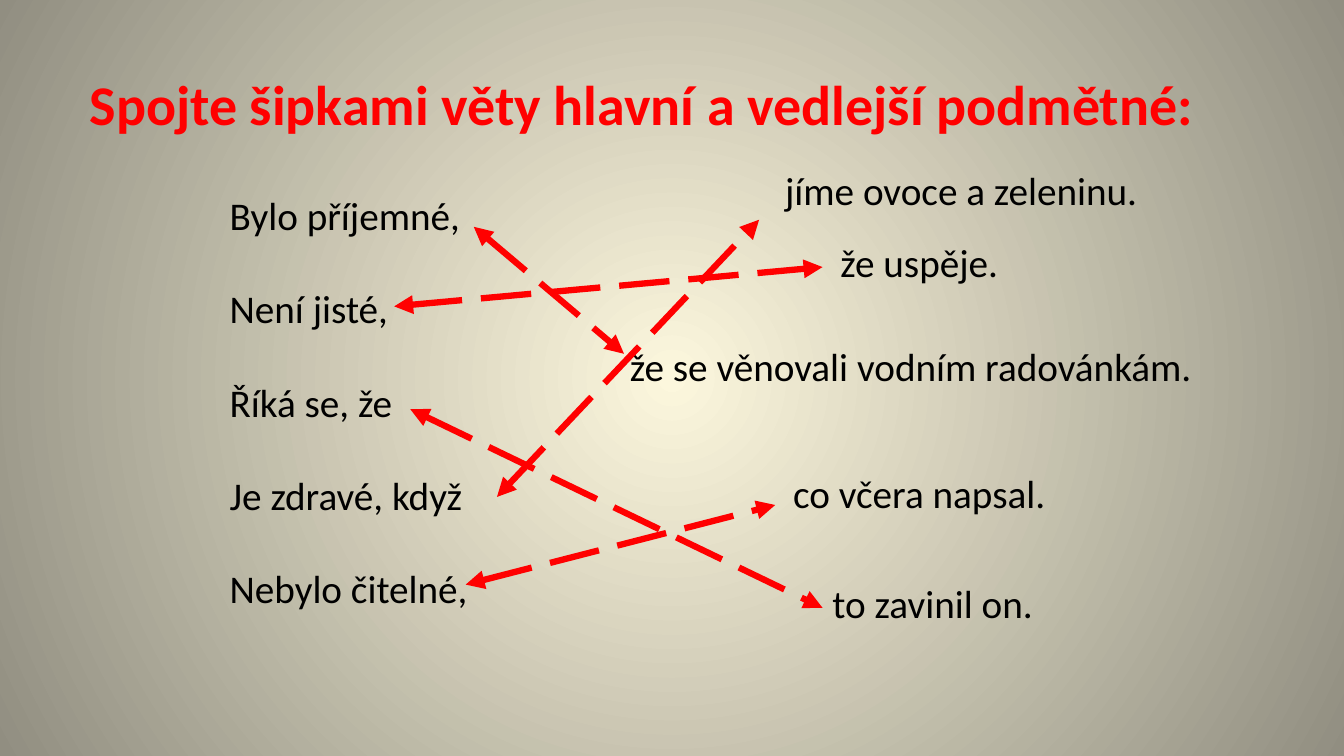
import pptx
import pptx.dml.color
import pptx.enum.dml
import pptx.enum.shapes
import pptx.enum.text
import pptx.oxml.ns
import pptx.util
from lxml import etree

RED = pptx.dml.color.RGBColor(0xFF, 0x00, 0x00)
BLACK = pptx.dml.color.RGBColor(0x00, 0x00, 0x00)
CREAM = pptx.dml.color.RGBColor(0xFC, 0xF7, 0xDD)
OLIVE_GREY = pptx.dml.color.RGBColor(0x91, 0x8E, 0x81)

SLIDE_WIDTH = pptx.util.Inches(13.33)
SLIDE_HEIGHT = pptx.util.Inches(7.5)
FONT = "Calibri"
CLAUSE_HEIGHT = 6.27

TITLE = "Spojte šipkami věty hlavní a vedlejší podmětné:"
MAIN_CLAUSES = [
    "Bylo příjemné,",
    "Není jisté,",
    "Říká se, že",
    "Je zdravé, když",
    "Nebylo čitelné,",
]
SUBJECT_CLAUSES = [
    ("že uspěje.", 61.8, 31.07, 18.6),
    ("jíme ovoce a zeleninu.", 57.68, 21.6, 32.18),
    ("co včera napsal.", 58.28, 61.6, 26.55),
    ("že se věnovali vodním radovánkám.", 46.13, 44.8, 45.15),
    ("to zavinil on.", 61.2, 76.27, 18.6),
]
ARROWS = [
    ((35.25, 30), (46.43, 46.8)),
    ((30.53, 54.13), (61.2, 80.4)),
    ((29.33, 40.53), (61.2, 35.33)),
    ((34.65, 77.33), (57.68, 66.8)),
    ((36.98, 65.73), (56.48, 29.07)),
]


def across(percent):
    return round(SLIDE_WIDTH * percent / 100)


def down(percent):
    return round(SLIDE_HEIGHT * percent / 100)


def add_child(parent, tag, **attributes):
    return etree.SubElement(parent, pptx.oxml.ns.qn(tag), attributes)


def paint_background(page):
    fill = page.background.fill
    fill.gradient()
    for stop, position, color in zip(fill.gradient_stops, (0, 1), (CREAM, OLIVE_GREY)):
        stop.position = position
        stop.color.rgb = color
    gradient = page.background._cSld.find(".//" + pptx.oxml.ns.qn("a:gradFill"))
    linear = gradient.find(pptx.oxml.ns.qn("a:lin"))
    circle = etree.Element(pptx.oxml.ns.qn("a:path"), {"path": "circle"})
    add_child(circle, "a:fillToRect", l="50000", t="50000", r="50000", b="50000")
    gradient.replace(linear, circle)


def add_text(page, lines, left, top, width, height, size=28, color=BLACK,
             bold=False, anchor=pptx.enum.text.MSO_ANCHOR.MIDDLE,
             inset=0.8, gap=0):
    box = page.shapes.add_textbox(across(left), down(top), across(width), down(height))
    frame = box.text_frame
    frame.word_wrap = True
    frame.vertical_anchor = anchor
    frame.margin_top = down(inset)
    frame.margin_right = frame.margin_bottom = 0
    for index, line in enumerate(lines):
        para = frame.add_paragraph() if index else frame.paragraphs[0]
        if index:
            para.space_before = pptx.util.Pt(gap)
        span = para.add_run()
        span.text = line
        span.font.name = FONT
        span.font.size = pptx.util.Pt(size)
        span.font.bold = bold
        span.font.color.rgb = color


def add_arrow(page, start, end):
    arrow = page.shapes.add_connector(
        pptx.enum.shapes.MSO_CONNECTOR.STRAIGHT,
        across(start[0]), down(start[1]), across(end[0]), down(end[1]))
    arrow.line.color.rgb = RED
    arrow.line.width = pptx.util.Pt(4.5)
    arrow.line.dash_style = pptx.enum.dml.MSO_LINE.LONG_DASH
    properties = arrow._element.spPr
    outline = properties.find(pptx.oxml.ns.qn("a:ln"))
    for tag in ("a:headEnd", "a:tailEnd"):
        add_child(outline, tag, type="triangle")
    add_child(properties, "a:effectLst")


def main():
    deck = pptx.Presentation()
    deck.slide_width = SLIDE_WIDTH
    deck.slide_height = SLIDE_HEIGHT
    page = deck.slides.add_slide(deck.slide_layouts[6])
    paint_background(page)
    add_text(page, [TITLE], 5.93, 2.53, 83.7, 21.47, size=40, color=RED, bold=True)
    add_text(page, MAIN_CLAUSES, 16.35, 23.73, 69.08, 71.33,
             anchor=pptx.enum.text.MSO_ANCHOR.TOP, inset=1.6, gap=33)
    for clause, left, top, width in SUBJECT_CLAUSES:
        add_text(page, [clause], left, top, width, CLAUSE_HEIGHT)
    for start, end in ARROWS:
        add_arrow(page, start, end)
    deck.save("out.pptx")


if __name__ == "__main__":
    main()
